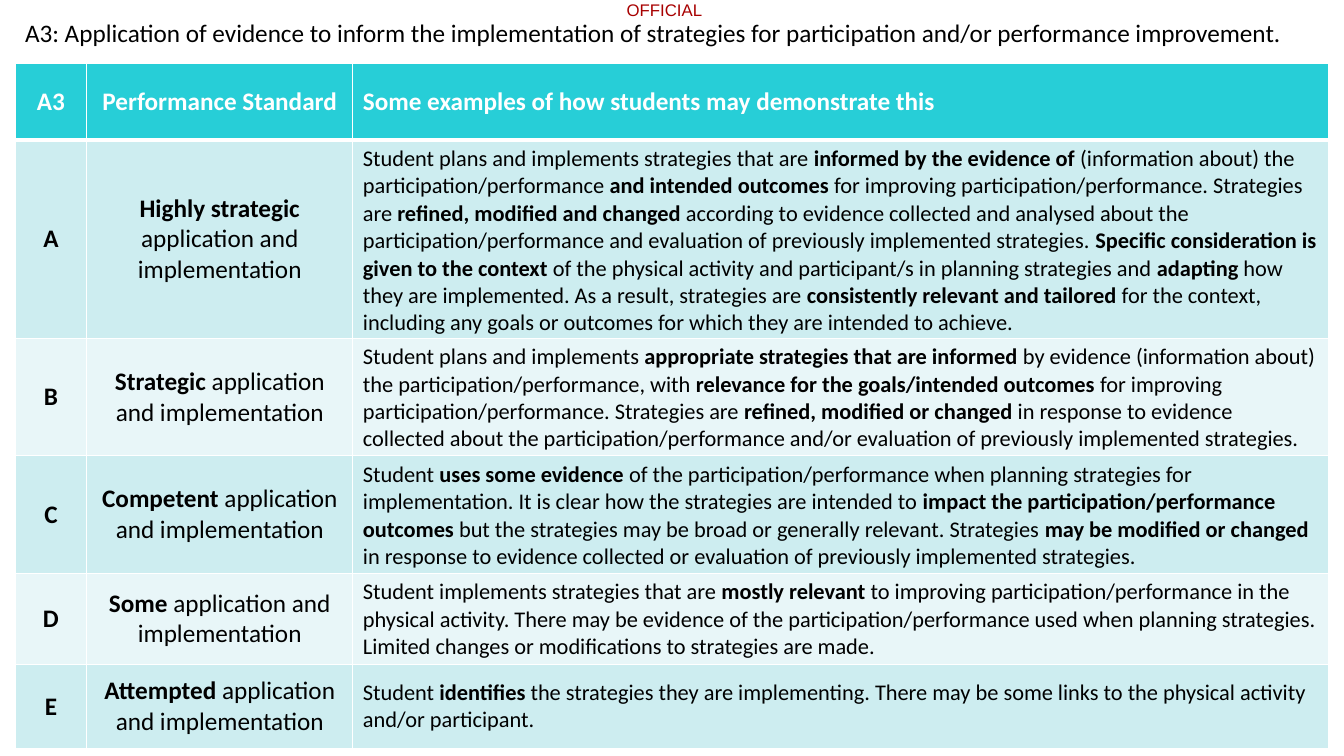
"""Builds the A3 performance standards slide: a marking label, a title and a rubric table."""
from pptx import Presentation
from pptx.dml.color import RGBColor
from pptx.enum.text import MSO_ANCHOR, PP_ALIGN
from pptx.oxml import parse_xml
from pptx.oxml.ns import nsdecls
from pptx.util import Pt

MIDDLE = MSO_ANCHOR.MIDDLE
LEFT, CENTER = PP_ALIGN.LEFT, PP_ALIGN.CENTER
PX = 9144
THEME = {
    "font": "Calibri", "label_font": "Arial",
    "heading_size": 18, "body_size": 16, "label_size": 12,
    "text": "000000", "light": "FFFFFF", "label": "A80000",
    "header": "27CED7", "bands": ("E8F6F8", "CDEDF0"),
    "thin": 1, "thick": 3,
}
TITLE = ("A3: Application of evidence to inform the implementation of strategies "
         "for participation and/or performance improvement.")
COLUMN_WIDTHS = (71, 264, 968)
ROW_HEIGHTS = (76, 195, 115, 115, 89, 84)
RUBRIC = (
    ("*A3*", "*Performance Standard*", "*Some examples of how students may demonstrate this*"),
    ("*A*", "*Highly strategic *application and implementation",
     "Student plans and implements strategies that are *informed by the evidence of *"
     "(information about) the participation/performance *and intended outcomes *"
     "for improving participation/performance. Strategies are *refined, modified and changed *"
     "according to evidence collected and analysed about the participation/performance and "
     "evaluation of previously implemented strategies. *Specific consideration is given to "
     "the context *of the physical activity and participant/s in planning strategies and "
     "*adapting* how they are implemented. As a result, strategies are *consistently relevant "
     "and tailored *for the context, including any goals or outcomes for which they are "
     "intended to achieve."),
    ("*B*", "*Strategic *application and implementation",
     "Student plans and implements *appropriate strategies that are informed *by evidence "
     "(information about) the participation/performance, with *relevance for the "
     "goals/intended outcomes *for improving participation/performance. Strategies are "
     "*refined, modified or changed *in response to evidence collected about the "
     "participation/performance and/or evaluation of previously implemented strategies."),
    ("*C*", "*Competent *application and implementation",
     "Student *uses some evidence *of the participation/performance when planning strategies "
     "for implementation. It is clear how the strategies are intended to *impact the "
     "participation/performance outcomes* but the strategies may be broad or generally "
     "relevant. Strategies *may be modified or changed *in response to evidence collected or "
     "evaluation of previously implemented strategies."),
    ("*D*", "*Some* application and implementation",
     "Student implements strategies that are *mostly relevant *to improving "
     "participation/performance in the physical activity. There may be evidence of the "
     "participation/performance used when planning strategies. Limited changes or "
     "modifications to strategies are made."),
    ("*E*", "*Attempted* application and implementation",
     "Student *identifies* the strategies they are implementing. There may be some links to "
     "the physical activity and/or participant."),
)


def write(para, marked_text, size, color, font=THEME["font"], align=LEFT):
    """Fill a paragraph, setting the stretches between asterisks in bold."""
    para.alignment = align
    for index, part in enumerate(marked_text.split("*")):
        if part:
            span = para.add_run()
            span.text = part
            span.font.name = font
            span.font.size = Pt(size)
            span.font.bold = index % 2 == 1
            span.font.color.rgb = RGBColor.from_string(color)


def add_border(cell, side, width):
    """Draw one side of a cell as a light line."""
    cell._tc.get_or_add_tcPr().append(parse_xml(
        f'<a:ln{side} {nsdecls("a")} w="{Pt(width)}"><a:solidFill>'
        f'<a:srgbClr val="{THEME["light"]}"/></a:solidFill></a:ln{side}>'))


deck = Presentation()
deck.slide_width, deck.slide_height = 1333 * PX, 750 * PX
page = deck.slides.add_slide(deck.slide_layouts[6])

label_box = page.shapes.add_textbox(619 * PX, 0, 80 * PX, 20 * PX)
label_frame = label_box.text_frame
label_frame.word_wrap = True
label_frame.margin_left = label_frame.margin_right = 0
label_frame.margin_top = label_frame.margin_bottom = 0
write(label_frame.paragraphs[0], "OFFICIAL", THEME["label_size"], THEME["label"],
      THEME["label_font"], CENTER)

rubric_frame = page.shapes.add_table(
    len(ROW_HEIGHTS), len(COLUMN_WIDTHS), 15 * PX, 63 * PX,
    sum(COLUMN_WIDTHS) * PX, sum(ROW_HEIGHTS) * PX)
rubric = rubric_frame.table
rubric.first_row = rubric.horz_banding = False
for column, width in zip(rubric.columns, COLUMN_WIDTHS):
    column.width = width * PX
for row, height in zip(rubric.rows, ROW_HEIGHTS):
    row.height = height * PX

for row_index, texts in enumerate(RUBRIC):
    is_header = row_index == 0
    fill = THEME["header"] if is_header else THEME["bands"][row_index % 2]
    color = THEME["light"] if is_header else THEME["text"]
    borders = {side: THEME["thin"] for side in "LRTB"}
    if row_index < 2:
        borders["B" if is_header else "T"] = THEME["thick"]
    for column_index, text in enumerate(texts):
        cell = rubric.cell(row_index, column_index)
        for side, width in borders.items():
            add_border(cell, side, width)
        cell.fill.solid()
        cell.fill.fore_color.rgb = RGBColor.from_string(fill)
        cell.vertical_anchor = MIDDLE
        is_example = column_index == 2
        size = THEME["body_size"] if is_example and not is_header else THEME["heading_size"]
        write(cell.text_frame.paragraphs[0], text, size, color,
              align=LEFT if is_example else CENTER)

title_box = page.shapes.add_textbox(15 * PX, 12 * PX, 1304 * PX, 40 * PX)
title_box.text_frame.word_wrap = True
title_para = title_box.text_frame.paragraphs[0]
title_para.space_after = Pt(6)
write(title_para, TITLE, THEME["heading_size"], THEME["text"])

deck.save("out.pptx")
